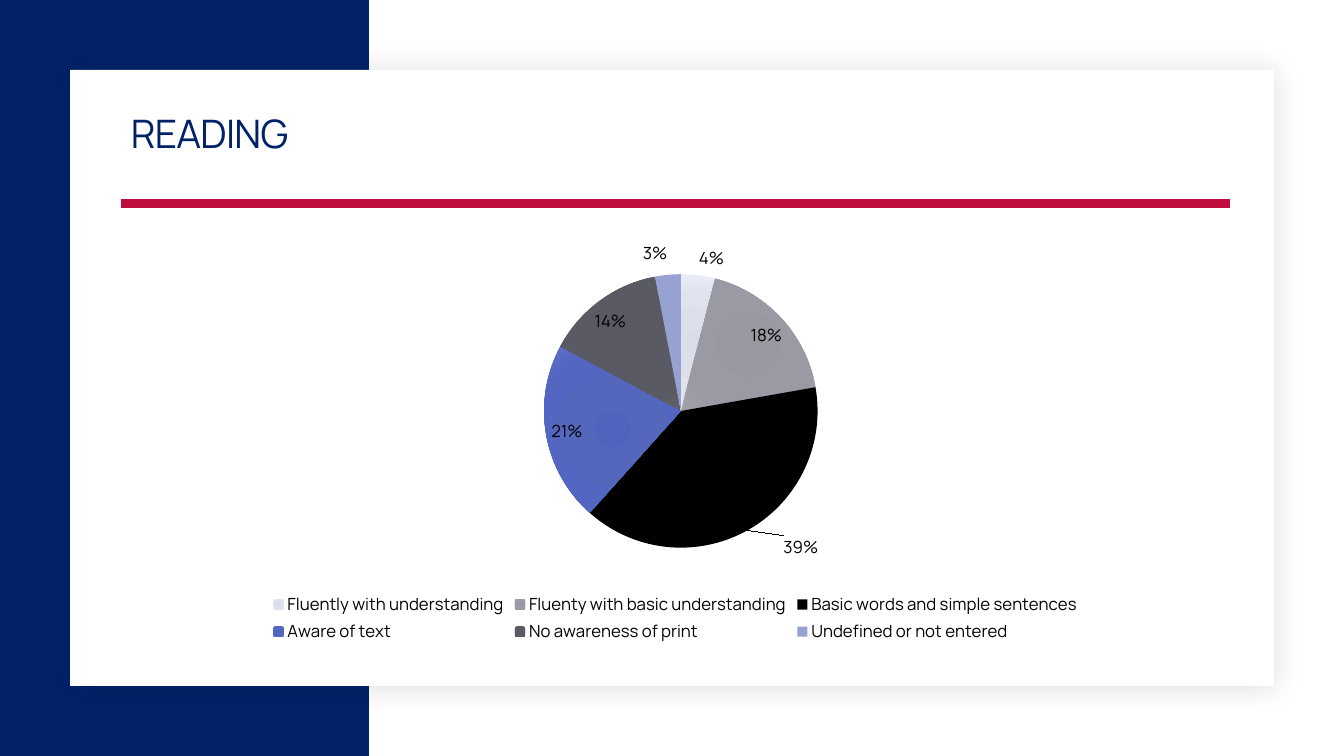
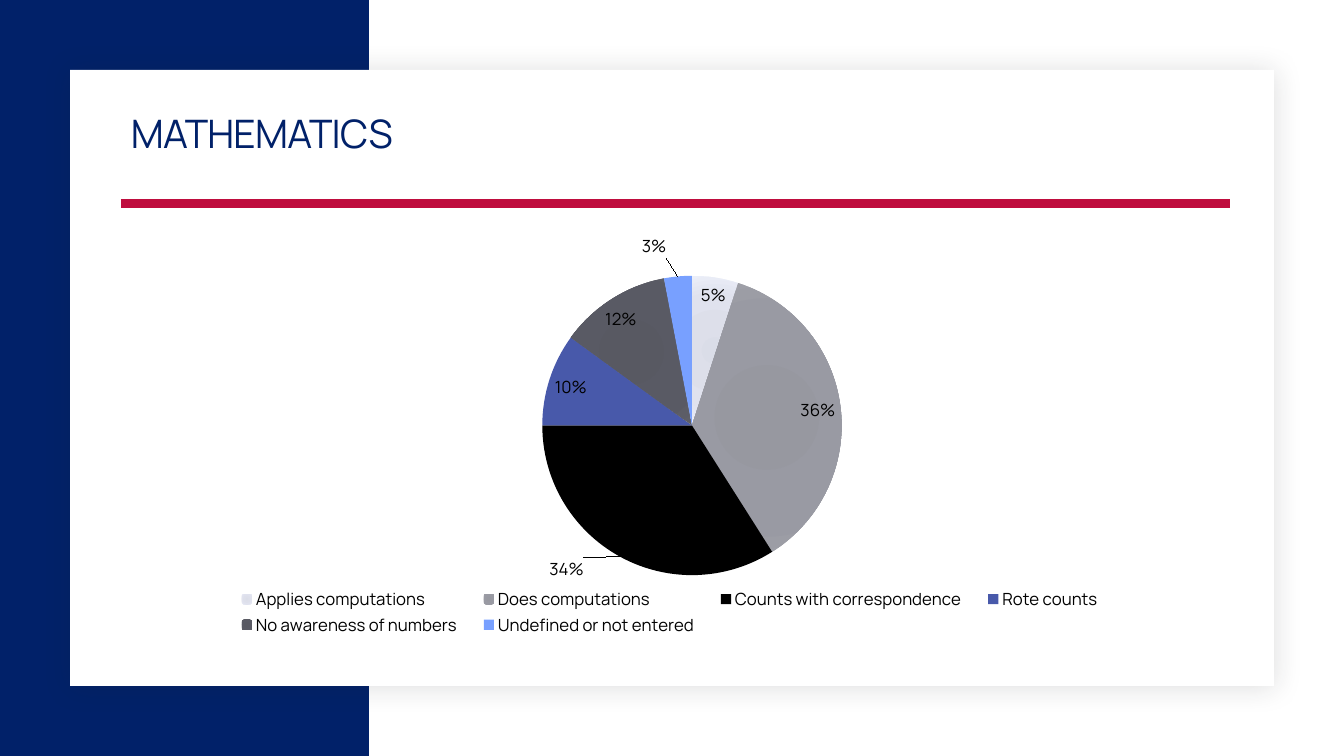
from copy import deepcopy

from pptx import Presentation
from pptx.chart.data import CategoryChartData
from pptx.dml.color import RGBColor
from pptx.enum import chart as ch, shapes, text
from pptx.oxml import parse_xml
from pptx.oxml.ns import nsdecls, qn
from pptx.util import Pt

NAVY = RGBColor(0x01, 0x21, 0x69)
RED = RGBColor(0xBF, 0x0D, 0x3E)
WHITE = RGBColor(0xFF, 0xFF, 0xFF)
BLACK = RGBColor(0x00, 0x00, 0x00)
PERIWINKLE = RGBColor(0x97, 0xA2, 0xD3)
INDIGO = RGBColor(0x48, 0x59, 0xAA)
SKY = RGBColor(0x78, 0xA0, 0xFF)
FONT = "Manrope"

# A tuple of four hex colours is a radial gradient with these stops.
STOPS = (0, 34, 70, 100)
PALE = ("DADDE8", "DDDFEA", "E0E2EE", "EBEEF8")
GREY = ("95969F", "9798A0", "999AA3", "A1A2A9")
BLUE = ("5164BD", "5467BD", "5367C2", "6072C2")
SLATE = ("575862", "585962", "595A64", "5E5F68")

LEFT, WIDTH = 86.4, 792
RULE_Y = 145.5

# Areas are x, y, width, height and offsets are x, y, as shares of the chart.
SLIDES = [
    {
        "title": "READING",
        "slices": [
            ("Fluently with understanding", 4, PALE),
            ("Fluenty with basic understanding", 18, GREY),
            ("Basic words and simple sentences", 39, BLACK),
            ("Aware of text", 21, BLUE),
            ("No awareness of print", 14, SLATE),
            ("Undefined or not entered", 3, PERIWINKLE),
        ],
        "pie_area": (0.38, 0.1, 0.25, 0.66),
        "legend_area": None,
        "label_offsets": {2: (0.03, 0), 5: (0, -0.01)},
    },
    {
        "title": "MATHEMATICS",
        "slices": [
            ("Applies computations", 5, PALE),
            ("Does computations", 36, GREY),
            ("Counts with correspondence", 34, BLACK),
            ("Rote counts", 10, INDIGO),
            ("No awareness of numbers", 12, SLATE),
            ("Undefined or not entered", 3, SKY),
        ],
        "pie_area": (0.38, 0.1, 0.27, 0.73),
        "legend_area": (0.09, 0.85, 0.81, 0.13),
        "label_offsets": {2: (-0.03, -0.01), 5: (-0.01, -0.03)},
    },
]


def add_block(page, left, top, width, height, color):
    block = page.shapes.add_shape(
        shapes.MSO_SHAPE.RECTANGLE, Pt(left), Pt(top), Pt(width), Pt(height))
    block.shadow.inherit = False
    block.fill.solid()
    block.fill.fore_color.rgb = color
    block.line.fill.background()
    return block


def add_soft_shadow(shape):
    effects = shape._element.spPr.find(qn("a:effectLst"))
    effects.append(parse_xml(
        f'<a:outerShdw {nsdecls("a")} blurRad="{Pt(20)}" dist="{Pt(2)}" '
        'dir="2700000" algn="tl" rotWithShape="0"><a:srgbClr val="1F2125">'
        '<a:alpha val="15000"/></a:srgbClr></a:outerShdw>'))


def add_frame(page, title):
    """Draw the band, card, red rule and title that every slide has."""
    add_block(page, 0, 0, 263.5, 540, NAVY)
    add_soft_shadow(add_block(page, 50, 50, 860, 440, WHITE))

    rule = page.shapes.add_connector(
        shapes.MSO_CONNECTOR.STRAIGHT,
        Pt(LEFT), Pt(RULE_Y), Pt(LEFT + WIDTH), Pt(RULE_Y))
    rule.line.color.rgb = RED
    rule.line.width = Pt(6)
    rule._element.spPr.append(parse_xml(f'<a:effectLst {nsdecls("a")}/>'))

    box = page.shapes.add_textbox(Pt(LEFT), Pt(74), Pt(WIDTH), Pt(46))
    box.text_frame.word_wrap = True
    box.text_frame.vertical_anchor = text.MSO_ANCHOR.MIDDLE
    para = box.text_frame.paragraphs[0]
    para.line_spacing = 0.9
    span = para.add_run()
    span.text = title
    set_font(span.font, 28, NAVY)
    span.font._element.set("spc", "-50")


def set_font(font, size, color=BLACK):
    font.name = FONT
    font.size = Pt(size)
    font.color.rgb = color


def manual_layout(values, is_area=True, target=""):
    """Return a chart layout element for an area or for a label offset."""
    modes = '<c:xMode val="edge"/><c:yMode val="edge"/>' if is_area else ""
    sizes = "".join(f'<c:{tag} val="{value}"/>' for tag, value in zip("xywh", values))
    return parse_xml(
        f'<c:layout {nsdecls("c")}><c:manualLayout>{target}{modes}{sizes}'
        '</c:manualLayout></c:layout>')


def place_plot(chart, area):
    plot_area = chart._chartSpace.chart.plotArea
    for old in plot_area.findall(qn("c:layout")):
        plot_area.remove(old)
    plot_area.insert(
        0, manual_layout(area, target='<c:layoutTarget val="inner"/>'))


def fill_slice(point, paint):
    if isinstance(paint, RGBColor):
        point.format.fill.solid()
        point.format.fill.fore_color.rgb = paint
    else:
        stops = "".join(
            f'<a:gs pos="{stop * 1000}"><a:srgbClr val="{color}"/></a:gs>'
            for stop, color in zip(STOPS, paint))
        gradient = parse_xml(
            f'<a:gradFill {nsdecls("a")} rotWithShape="1"><a:gsLst>{stops}</a:gsLst>'
            '<a:path path="circle"><a:fillToRect l="100000" t="100000" '
            'r="100000" b="100000"/></a:path></a:gradFill>')
        point.format.fill._xPr.insert(0, gradient)
    point.format.line.fill.background()


def add_labels(series, offsets):
    """Show percentages, moving the labels of some slices by an offset."""
    labels = series.data_labels
    labels.show_value = False
    labels.show_percentage = True
    labels.number_format = "0%"
    labels.number_format_is_linked = False
    labels.position = ch.XL_LABEL_POSITION.BEST_FIT
    set_font(labels.font, 12)
    root = labels._element
    shared = [part for part in root if part.tag != qn("c:showLeaderLines")]
    for place, (index, offset) in enumerate(offsets.items()):
        label = parse_xml(f'<c:dLbl {nsdecls("c")}><c:idx val="{index}"/></c:dLbl>')
        label.append(manual_layout(offset, is_area=False))
        label.extend(deepcopy(shared))
        root.insert(place, label)


def add_pie(page, content):
    names, values, paints = zip(*content["slices"])
    data = CategoryChartData()
    data.categories = names
    data.add_series("Series 1", values)
    chart = page.shapes.add_chart(
        ch.XL_CHART_TYPE.PIE, Pt(LEFT), Pt(166.3), Pt(WIDTH), Pt(296), data).chart
    set_font(chart.font, 10)
    chart.has_title = False
    place_plot(chart, content["pie_area"])

    chart.has_legend = True
    legend = chart.legend
    legend.position = ch.XL_LEGEND_POSITION.BOTTOM
    legend.include_in_layout = False
    set_font(legend.font, 12)
    if content["legend_area"]:
        for old in legend._element.findall(qn("c:layout")):
            legend._element.remove(old)
        legend._element.find(qn("c:legendPos")).addnext(
            manual_layout(content["legend_area"]))

    plot = chart.plots[0]
    plot.vary_by_categories = True
    series = plot.series[0]
    for index, paint in enumerate(paints):
        fill_slice(series.points[index], paint)
    add_labels(series, content["label_offsets"])


def main():
    deck = Presentation()
    deck.slide_width, deck.slide_height = Pt(960), Pt(540)
    for content in SLIDES:
        page = deck.slides.add_slide(deck.slide_layouts[6])
        add_frame(page, content["title"])
        add_pie(page, content)
    deck.save("out.pptx")


if __name__ == "__main__":
    main()
